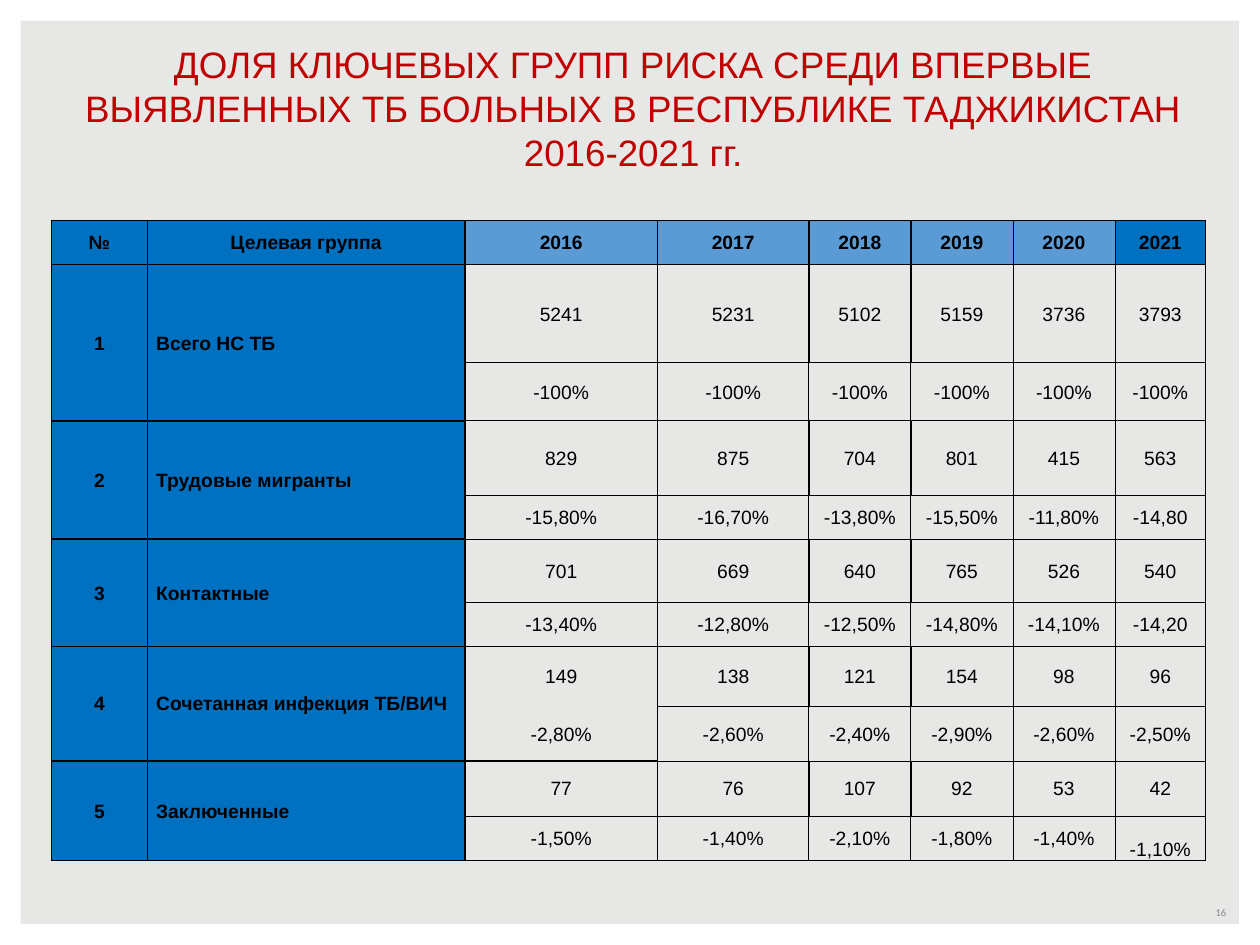
from lxml import etree
from pptx import Presentation
from pptx.dml import color as dml
from pptx.enum import shapes, text
from pptx.oxml import ns
from pptx.util import Inches, Pt

BLUE, SKY, BLACK = "0070C0", "5B9BD5", "000000"
TITLE = ("ДОЛЯ КЛЮЧЕВЫХ ГРУПП РИСКА СРЕДИ ВПЕРВЫЕ ВЫЯВЛЕННЫХ ТБ БОЛЬНЫХ "
         "В РЕСПУБЛИКЕ ТАДЖИКИСТАН 2016-2021 гг.")
HEAD = ["№", "Целевая группа", "2016", "2017", "2018", "2019", "2020", "2021"]
GROUPS = [
    ("Всего НС ТБ", "5241 5231 5102 5159 3736 3793",
     "-100% -100% -100% -100% -100% -100%"),
    ("Трудовые мигранты", "829 875 704 801 415 563",
     "-15,80% -16,70% -13,80% -15,50% -11,80% -14,80"),
    ("Контактные", "701 669 640 765 526 540",
     "-13,40% -12,80% -12,50% -14,80% -14,10% -14,20"),
    ("Сочетанная инфекция ТБ/ВИЧ", "149 138 121 154 98 96",
     "-2,80% -2,60% -2,40% -2,90% -2,60% -2,50%"),
    ("Заключенные", "77 76 107 92 53 42",
     "-1,50% -1,40% -2,10% -1,80% -1,40% -1,10%"),
]
COLS = [0.76, 2.52, 1.53, 1.2, 0.81, 0.81, 0.81, 0.72]
ROWS = [0.35, 0.78, 0.46, 0.59, 0.35, 0.5, 0.35, 0.48, 0.43, 0.44, 0.35]
SPECIAL = {(7, 2): {"B": 0}, (8, 2): {"L": 1, "T": 0, "B": 1}, (9, 2): {"T": 1}}


def rgb(code):
    """Turn a hex string into a colour."""
    return dml.RGBColor.from_string(code)


def write(frame, words, size=11, font="Arial", color=BLACK, bold=False,
          align=text.PP_ALIGN.CENTER):
    """Put one formatted paragraph into a text frame."""
    para = frame.paragraphs[0]
    para.alignment = align
    run = para.add_run()
    run.text = words
    run.font.size, run.font.name, run.font.bold = Pt(size), font, bold
    run.font.color.rgb = rgb(color)


def label(slide, box, words, anchor=text.MSO_ANCHOR.TOP, **style):
    """Add a wrapped text box."""
    frame = slide.shapes.add_textbox(*map(Inches, box)).text_frame
    frame.word_wrap = True
    frame.vertical_anchor = anchor
    write(frame, words, **style)


def border(slide, box):
    """Draw the white frame around the slide."""
    edge = slide.shapes.add_shape(shapes.MSO_SHAPE.FRAME, *map(Inches, box))
    edge.adjustments[0] = 0.022
    edge.shadow.inherit = False
    edge.fill.solid()
    edge.fill.fore_color.rgb = rgb("FFFFFF")
    edge.line.fill.background()


def widths(row, col):
    """Give the line widths of a cell by side, in points."""
    if col < 2:
        return dict.fromkeys("LRTB", 1)
    sides = dict.fromkeys("LRTB", 0.5)
    if col < 6 and (row == 0 or row % 2):
        sides["L"] = 1
        sides["R"] = 1 if col < 5 else 0.5
        sides["T"] = 1 if row < 2 else 0.5
        sides["B"] = 1 if row == 0 else 0.5
    return {**sides, **SPECIAL.get((row, col), {})}


def rule(cell, sides):
    """Draw the cell borders, with zero for none."""
    props = cell._tc.get_or_add_tcPr()
    for spot, (side, width) in enumerate(sides.items()):
        line = etree.Element(ns.qn("a:ln" + side), w=str(Pt(width)))
        if width:
            fill = etree.SubElement(line, ns.qn("a:solidFill"))
            etree.SubElement(fill, ns.qn("a:srgbClr"), val=BLACK)
        else:
            etree.SubElement(line, ns.qn("a:noFill"))
        props.insert(spot, line)


def dress(cell, row, col):
    """Set the fill, insets, anchor and borders of a cell."""
    if row == 0 or col < 2:
        cell.fill.solid()
        cell.fill.fore_color.rgb = rgb(SKY if 2 <= col < 7 else BLUE)
    else:
        cell.fill.background()
    cell.margin_left = Inches(0.07 if col == 1 and row else 0.01)
    cell.margin_right = cell.margin_top = Inches(0.01)
    cell.margin_bottom = 0
    last = (row, col) == (len(ROWS) - 1, len(COLS) - 1)
    cell.vertical_anchor = text.MSO_ANCHOR.BOTTOM if last else text.MSO_ANCHOR.MIDDLE
    rule(cell, widths(row, col))


def grid(slide, box):
    """Build the table of risk groups by year."""
    table = slide.shapes.add_table(len(ROWS), len(COLS), *map(Inches, box)).table
    table.first_row = table.horz_banding = False
    for part, size in zip(table.columns, COLS):
        part.width = Inches(size)
    for part, size in zip(table.rows, ROWS):
        part.height = Inches(size)
    lines = [HEAD]
    for num, (name, counts, shares) in enumerate(GROUPS, 1):
        lines += [[str(num), name] + counts.split(), ["", ""] + shares.split()]
    for row, line in enumerate(lines):
        for col, words in enumerate(line):
            cell = table.cell(row, col)
            dress(cell, row, col)
            if words:
                left = row and col == 1
                write(cell.text_frame, words, bold=row == 0 or col < 2,
                      align=text.PP_ALIGN.LEFT if left else text.PP_ALIGN.CENTER)
    for row in range(1, len(ROWS), 2):
        for col in range(2):
            table.cell(row, col).merge(table.cell(row + 1, col))


def main():
    """Build and save the slide."""
    deck = Presentation()
    deck.slide_width, deck.slide_height = Inches(10), Inches(7.5)
    slide = deck.slides.add_slide(deck.slide_layouts[6])
    slide.background.fill.solid()
    slide.background.fill.fore_color.rgb = rgb("E7E7E5")
    border(slide, (0, 0, 10, 7.5))
    label(slide, (7.5, 7.14, 2.33, 0.2), "16", anchor=text.MSO_ANCHOR.MIDDLE,
          size=6, font="Calibri", color="898989", align=text.PP_ALIGN.RIGHT)
    label(slide, (0.36, 0.28, 9.33, 1.16), TITLE, size=21, color="C00000")
    grid(slide, (0.41, 1.75, sum(COLS), sum(ROWS)))
    deck.save("out.pptx")


if __name__ == "__main__":
    main()
